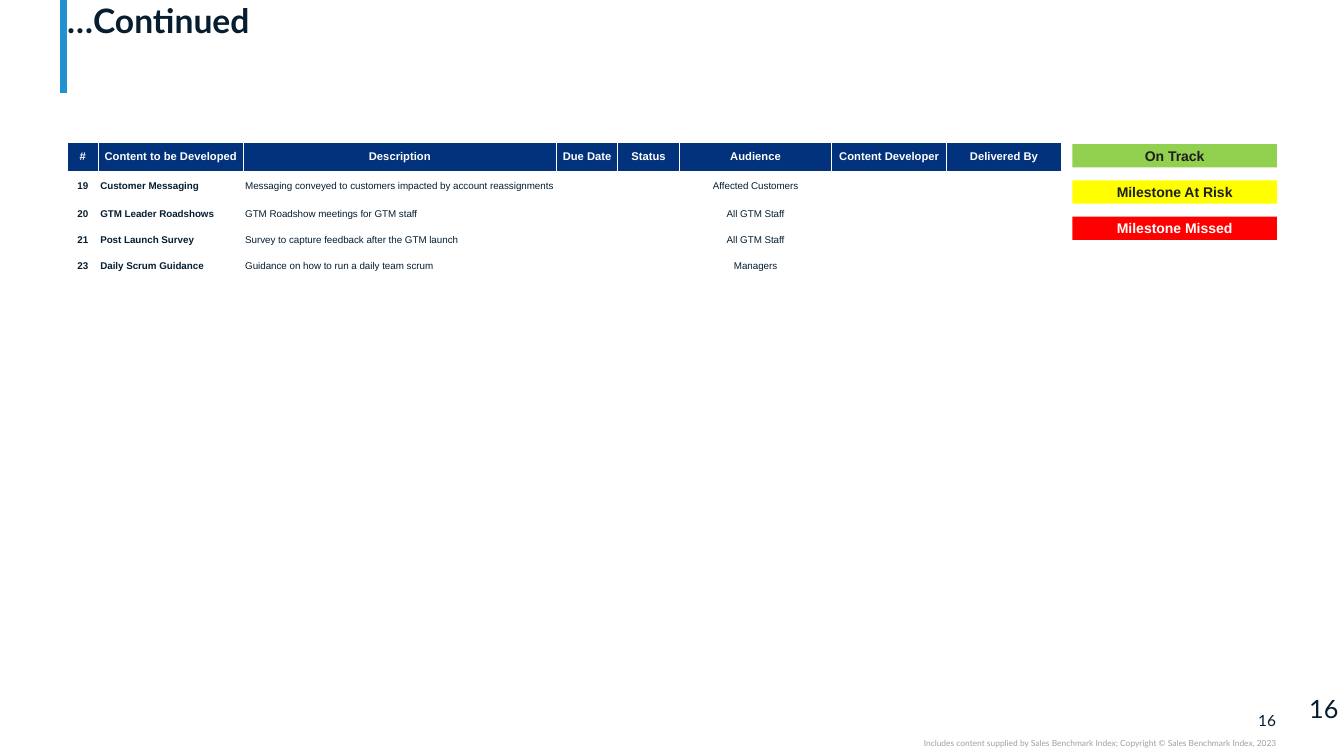
from lxml import etree
from pptx import Presentation
from pptx.dml.color import RGBColor
from pptx.enum.shapes import MSO_CONNECTOR, MSO_SHAPE
from pptx.enum.text import MSO_ANCHOR, PP_ALIGN
from pptx.oxml.ns import qn
from pptx.util import Pt

LEFT, CENTER, RIGHT = PP_ALIGN.LEFT, PP_ALIGN.CENTER, PP_ALIGN.RIGHT
TOP, MIDDLE = MSO_ANCHOR.TOP, MSO_ANCHOR.MIDDLE
RECTANGLE, STRAIGHT = MSO_SHAPE.RECTANGLE, MSO_CONNECTOR.STRAIGHT

INK, WHITE, NAVY, BLUE = "071E31", "FFFFFF", "03327C", "2391CF"
GREY, CHARCOAL = "A0A0A0", "1F1F1F"

COLUMN_WIDTHS = [22.3, 103.5, 223.7, 43.9, 43.9, 109, 82, 82]
ROW_HEIGHTS = [20.3, 21.3, 18.5, 18.5, 18.5]
HEADERS = ["#", "Content to be Developed", "Description", "Due Date", "Status",
           "Audience", "Content Developer", "Delivered By"]
CONTENT = [
    ("19", "Customer Messaging",
     "Messaging conveyed to customers impacted by account reassignments",
     "Affected Customers"),
    ("20", "GTM Leader Roadshows", "GTM Roadshow meetings for GTM staff", "All GTM Staff"),
    ("21", "Post Launch Survey", "Survey to capture feedback after the GTM launch",
     "All GTM Staff"),
    ("23", "Daily Scrum Guidance", "Guidance on how to run a daily team scrum", "Managers"),
]
STATUSES = [("On Track", "92D050", CHARCOAL), ("Milestone At Risk", "FFFF00", CHARCOAL),
            ("Milestone Missed", "FF0000", WHITE)]


def rgb(color):
    return RGBColor.from_string(color)


def write(frame, text, size, color, font="Arial", bold=False, align=LEFT):
    """Put one formatted paragraph in a text frame and return it."""
    para = frame.paragraphs[0]
    para.text = text
    para.alignment = align
    for span in para.runs:
        span.font.name = font
        span.font.size = Pt(size)
        span.font.bold = bold
        span.font.color.rgb = rgb(color)
    return para


def add_text(slide, box, text, size, color, bold=False, align=LEFT, anchor=TOP):
    frame = slide.shapes.add_textbox(*map(Pt, box)).text_frame
    frame.margin_left = frame.margin_top = frame.margin_right = frame.margin_bottom = 0
    frame.word_wrap = True
    frame.vertical_anchor = anchor
    return write(frame, text, size, color, "Lato", bold, align)


def add_title(slide, box):
    left, top, width, height = box
    accent_x = left - 2.6
    accent = slide.shapes.add_connector(STRAIGHT, Pt(accent_x), 0, Pt(accent_x),
                                        Pt(top + height + 3))
    accent.line.color.rgb = rgb(BLUE)
    accent.line.width = Pt(5)
    etree.SubElement(accent._element.spPr, qn("a:effectLst"))
    add_text(slide, box, "…Continued", 24, INK, bold=True).line_spacing = 0.9


def add_footer(slide, box):
    left, top, width, height = box
    right = left + width
    add_text(slide, (right - 24, top, 24, 13.7), "16", 11, INK, align=RIGHT, anchor=MIDDLE)
    add_text(slide, (left, top + 19.4, width, 7.2),
             "Includes content supplied by Sales Benchmark Index; "
             "Copyright © Sales Benchmark Index, 2023", 6, GREY, align=RIGHT)
    add_text(slide, (right + 23.7, top - 8.6, 24.5, 14.4), "16", 18, INK, anchor=MIDDLE)


def add_legend(slide, box):
    """Stack the status keys evenly from the top to the bottom of the box."""
    left, top, width, height = box
    key_height = 16.6
    pitch = (height - key_height) / (len(STATUSES) - 1)
    for index, (label, fill, color) in enumerate(STATUSES):
        key = slide.shapes.add_shape(RECTANGLE, Pt(left), Pt(top + index * pitch),
                                     Pt(width), Pt(key_height))
        key.shadow.inherit = False
        key.fill.solid()
        key.fill.fore_color.rgb = rgb(fill)
        key.line.fill.background()
        key.text_frame.vertical_anchor = MIDDLE
        write(key.text_frame, label, 10, color, bold=True, align=CENTER)


def style_cell(cell, fill, side_margin):
    cell.margin_left = cell.margin_right = Pt(side_margin)
    cell.margin_top = cell.margin_bottom = 0
    cell.vertical_anchor = MIDDLE
    properties = cell._tc.get_or_add_tcPr()
    for side in ("lnL", "lnR", "lnT", "lnB"):
        border = etree.SubElement(properties, qn(f"a:{side}"), w=str(Pt(0.75)))
        solid = etree.SubElement(border, qn("a:solidFill"))
        etree.SubElement(solid, qn("a:srgbClr"), val=WHITE)
    if fill:
        cell.fill.solid()
        cell.fill.fore_color.rgb = rgb(fill)
    else:
        cell.fill.background()


def add_content_table(slide, box):
    rows = [HEADERS] + [(number, name, description, "", "", audience, "", "")
                        for number, name, description, audience in CONTENT]
    table = slide.shapes.add_table(len(rows), len(HEADERS), *map(Pt, box)).table
    table.first_row = table.horz_banding = False
    for column, width in zip(table.columns, COLUMN_WIDTHS):
        column.width = Pt(width)
    for row, height in zip(table.rows, ROW_HEIGHTS):
        row.height = Pt(height)

    for row_index, texts in enumerate(rows):
        is_header = row_index == 0
        for column_index, text in enumerate(texts):
            cell = table.cell(row_index, column_index)
            is_left = not is_header and column_index in (1, 2)
            if is_header:
                fill = NAVY
            else:
                fill = WHITE if column_index in (0, 1, 4) else None
            style_cell(cell, fill, 1.4 if is_left else 0)
            para = write(cell.text_frame, text, 8 if is_header else 7,
                         WHITE if is_header else INK,
                         bold=is_header or column_index < 2,
                         align=LEFT if is_left else CENTER)
            if not text:
                # Keeps empty cells from stretching their row
                etree.SubElement(para._p, qn("a:endParaRPr"), sz="700")


def main():
    deck = Presentation()
    deck.slide_width, deck.slide_height = Pt(960), Pt(540)
    slide = deck.slides.add_slide(deck.slide_layouts[6])
    add_title(slide, (48, 2.9, 863.3, 60.5))
    add_content_table(slide, (48, 102, sum(COLUMN_WIDTHS), sum(ROW_HEIGHTS)))
    add_legend(slide, (766, 103, 146, 68.4))
    add_footer(slide, (540, 507.6, 371.5, 26.6))
    deck.save("out.pptx")


if __name__ == "__main__":
    main()
